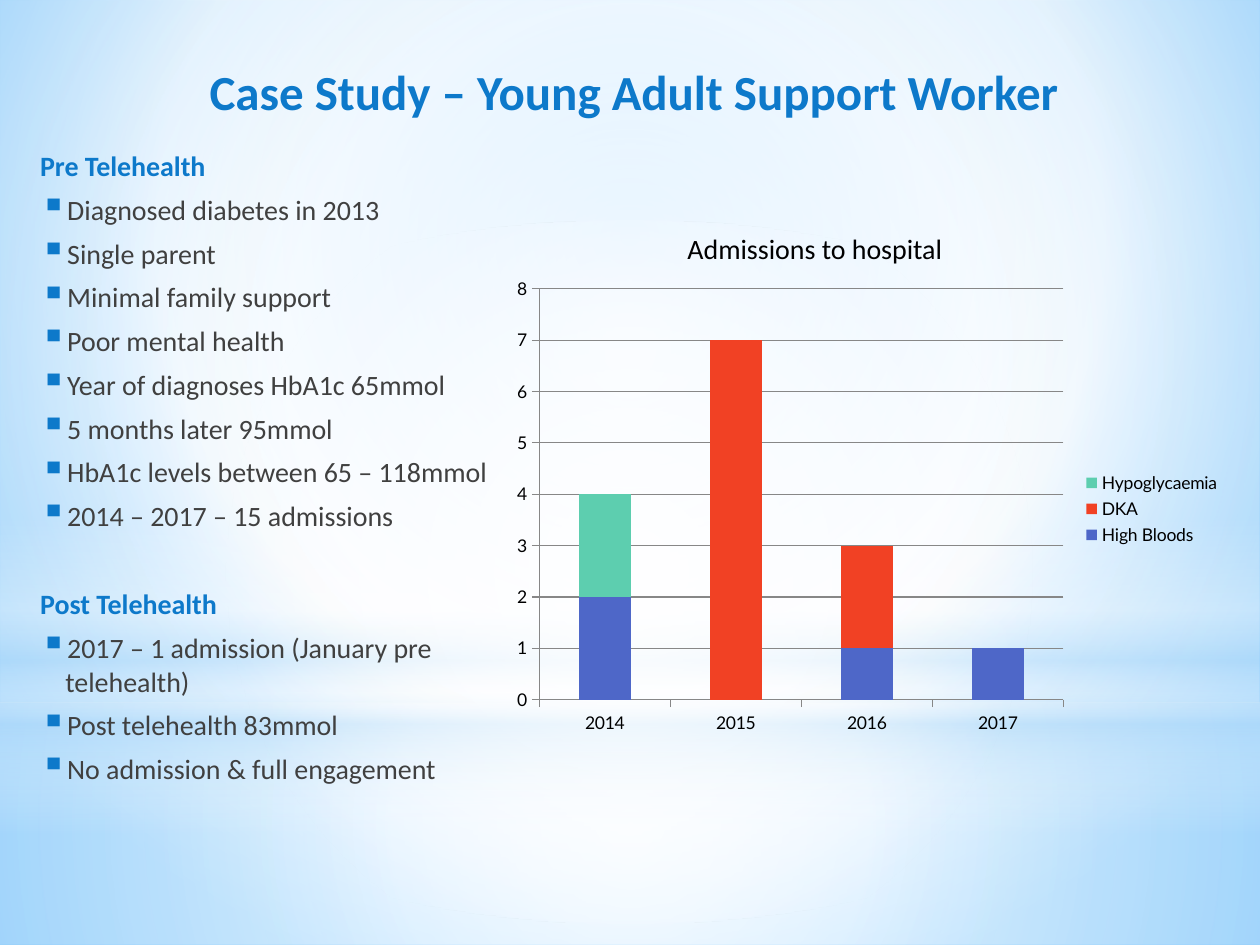
from dataclasses import dataclass

from lxml import etree
from pptx import Presentation
from pptx.chart.data import CategoryChartData
from pptx.dml.color import RGBColor
from pptx.enum.chart import XL_CHART_TYPE, XL_LEGEND_POSITION, XL_TICK_MARK
from pptx.enum.shapes import MSO_SHAPE
from pptx.enum.text import MSO_ANCHOR, MSO_AUTO_SIZE, PP_ALIGN
from pptx.oxml.ns import qn
from pptx.util import Cm, Pt

STACKED = XL_CHART_TYPE.COLUMN_STACKED
LEGEND_RIGHT = XL_LEGEND_POSITION.RIGHT
TICK_OUT, TICK_NONE = XL_TICK_MARK.OUTSIDE, XL_TICK_MARK.NONE
RECTANGLE, OVAL = MSO_SHAPE.RECTANGLE, MSO_SHAPE.OVAL
TOP, LEFT = MSO_ANCHOR.TOP, PP_ALIGN.LEFT
FIT_SHAPE, FIT_NONE = MSO_AUTO_SIZE.SHAPE_TO_FIT_TEXT, MSO_AUTO_SIZE.NONE


@dataclass(frozen=True)
class Theme:
    """Colours, fonts and type sizes of the deck."""

    accent: str = "0D79CA"
    body: str = "404040"
    dark: str = "000000"
    axis: str = "878787"
    white: str = "FFFFFF"
    haze: str = "B4DCFA"
    sky: str = "9ED5FF"
    deep_sky: str = "5BB9FF"
    high_bloods: str = "4E67C8"
    dka: str = "F14124"
    hypo: str = "5DCEAF"
    text_font: str = "Calibri"
    chart_font: str = "Lato"
    title_size: int = 28
    text_size: int = 16
    chart_size: int = 10


def child(parent, tag, **attributes):
    """Append an XML element and return it."""
    element = etree.SubElement(parent, qn(tag))
    for name, value in attributes.items():
        element.set(name, str(value))
    return element


def gradient(stops, focus):
    """Build a gradient: vertical without a focus, else circular."""
    grad = etree.Element(qn("a:gradFill"), rotWithShape="1")
    stop_list = child(grad, "a:gsLst")
    for position, colour, opacity in stops:
        stop = child(stop_list, "a:gs", pos=position * 1000)
        tint = child(stop, "a:srgbClr", val=colour)
        if opacity < 100:
            child(tint, "a:alpha", val=opacity * 1000)
    if focus is None:
        child(grad, "a:lin", ang=90 * 60000, scaled=0)
    else:
        circle = child(grad, "a:path", path="circle")
        edges = {side: edge * 1000 for side, edge in zip("ltrb", focus)}
        child(circle, "a:fillToRect", **edges)
    return grad


class SlideBuilder:
    """Holds the theme and the current slide."""

    def __init__(self, slide, theme):
        self.slide, self.theme = slide, theme

    def background(self, stops, focus):
        """Fill the slide background with a gradient."""
        self.slide.background.fill.solid()
        solid = self.slide.element.xpath(".//p:bgPr/a:solidFill")[0]
        solid.getparent().replace(solid, gradient(stops, focus))

    def glow(self, kind, top, height, stops, focus):
        """Add a full-width gradient layer."""
        layer = self.slide.shapes.add_shape(kind, 0, Cm(top), Cm(25.4), Cm(height))
        layer.shadow.inherit = False
        layer.line.fill.background()
        layer.fill.solid()
        solid = layer.element.xpath("./p:spPr/a:solidFill")[0]
        solid.getparent().replace(solid, gradient(stops, focus))

    def run(self, paragraph, words, size, colour, bold=False):
        """Add one formatted run."""
        run = paragraph.add_run()
        run.text = words
        run.font.name, run.font.size, run.font.bold = self.theme.text_font, Pt(size), bold
        run.font.color.rgb = RGBColor.from_string(colour)

    def indent(self, paragraph, margin, first=0):
        """Set the left margin and first-line indent."""
        properties = paragraph._p.get_or_add_pPr()
        properties.set("marL", str(Cm(margin)))
        properties.set("indent", str(Cm(first)))
        return properties

    def title(self, words, box):
        """Place the title above the background layers."""
        title = self.slide.shapes.title
        title.element.getparent().append(title.element)
        title.left, title.top, title.width, title.height = map(Cm, box)
        frame = title.text_frame
        frame.word_wrap, frame.auto_size, frame.vertical_anchor = False, FIT_SHAPE, TOP
        heading = frame.paragraphs[0]
        heading.alignment = LEFT
        self.indent(heading, 0.13)
        self.run(heading, words, self.theme.title_size, self.theme.accent, True)

    def caption(self, words, box):
        """Add a single-line caption."""
        frame = self.slide.shapes.add_textbox(*map(Cm, box)).text_frame
        frame.word_wrap, frame.auto_size = False, FIT_SHAPE
        self.run(frame.paragraphs[0], words, self.theme.text_size, self.theme.dark)

    def sections(self, sections, box):
        """Add headed bullet lists in one text box."""
        frame = self.slide.shapes.add_textbox(*map(Cm, box)).text_frame
        frame.word_wrap, frame.auto_size = True, FIT_NONE
        theme = self.theme
        for number, (heading, points) in enumerate(sections):
            head = frame.add_paragraph() if number else frame.paragraphs[0]
            self.indent(head, 0.13)
            head.space_before, head.space_after = Pt(28.2 if number else 2.8), Pt(3)
            self.run(head, heading, theme.text_size, theme.accent, True)
            for point in points:
                item = frame.add_paragraph()
                item.space_before, item.space_after = Pt(2.8), Pt(3)
                properties = self.indent(item, 0.64, -0.51)
                child(child(properties, "a:buClr"), "a:srgbClr", val=theme.accent)
                child(properties, "a:buSzPct", val=130000)
                child(properties, "a:buChar", char="▪")
                self.run(item, point, theme.text_size, theme.body)

    def stacked_columns(self, years, series, box, plot_area):
        """Add a stacked column chart from (name, values, colour) rows."""
        data = CategoryChartData()
        data.categories = years
        for name, values, _ in series:
            data.add_series(name, values)
        chart = self.slide.shapes.add_chart(STACKED, *map(Cm, box), data).chart
        chart.has_title = False
        chart.font.name, chart.font.size = self.theme.chart_font, Pt(self.theme.chart_size)
        chart.font.color.rgb = RGBColor.from_string(self.theme.dark)
        chart.has_legend = True
        chart.legend.position, chart.legend.include_in_layout = LEGEND_RIGHT, False
        plot = chart.plots[0]
        plot.gap_width, plot.overlap, plot.vary_by_categories = 150, 100, False
        for column, (_, _, colour) in zip(plot.series, series):
            column.format.fill.solid()
            column.format.fill.fore_color.rgb = RGBColor.from_string(colour)
        scale = chart.value_axis
        scale.minimum_scale, scale.maximum_scale, scale.major_unit = 0, 8, 1
        scale.has_major_gridlines = True
        for axis in (chart.category_axis, scale):
            axis.major_tick_mark, axis.minor_tick_mark = TICK_OUT, TICK_NONE
        for part in (chart.category_axis, scale, scale.major_gridlines):
            part.format.line.color.rgb = RGBColor.from_string(self.theme.axis)
            part.format.line.width = Pt(0.75)
        area = chart.element.xpath(".//c:plotArea")[0]
        for old in area.findall(qn("c:layout")):
            area.remove(old)
        layout = etree.Element(qn("c:layout"))
        area.insert(0, layout)
        manual = child(layout, "c:manualLayout")
        child(manual, "c:layoutTarget", val="inner")
        for side in "xy":
            child(manual, f"c:{side}Mode", val="edge")
        for side, share in zip("xywh", plot_area):
            child(manual, f"c:{side}", val=share)


def main():
    """Build and save the case study slide."""
    deck = Presentation()
    deck.slide_width, deck.slide_height = Cm(25.4), Cm(19.05)
    theme = Theme()
    page = SlideBuilder(deck.slides.add_slide(deck.slide_layouts[5]), theme)
    white, haze, centre = theme.white, theme.haze, (50, 50, 50, 50)
    page.background([(0, theme.sky, 100), (60, white, 100), (100, theme.deep_sky, 100)],
                    (20, 10, 20, 60))
    page.glow(RECTANGLE, 14.17, 4.88, [(0, white, 91), (37, white, 76), (100, haze, 79)], centre)
    page.glow(RECTANGLE, 0, 14.17, [(0, white, 89), (48, white, 62), (100, haze, 79)], centre)
    page.glow(RECTANGLE, 10.46, 6.35,
              [(0, white, 0), (29, white, 30), (45, haze, 40),
               (55, white, 26), (65, haze, 60), (100, white, 0)], None)
    page.glow(OVAL, 4.45, 14.17, [(0, white, 100), (56, white, 0)], centre)
    page.sections([
        ("Pre Telehealth", [
            "Diagnosed diabetes in 2013", "Single parent", "Minimal family support",
            "Poor mental health", "Year of diagnoses HbA1c 65mmol",
            "5 months later 95mmol", "HbA1c levels between 65 – 118mmol",
            "2014 – 2017 – 15 admissions"]),
        ("Post Telehealth", [
            "2017 – 1 admission (January pre telehealth)",
            "Post telehealth 83mmol", "No admission & full engagement"]),
    ], (0.43, 2.87, 9.73, 15.14))
    page.title("Case Study – Young Adult Support Worker", (3.84, 1.12, 17.93, 1.45))
    page.stacked_columns(
        ["2014", "2015", "2016", "2017"],
        [("High Bloods", (2, None, 1, 1), theme.high_bloods),
         ("DKA", (None, 7, 2, None), theme.dka),
         ("Hypoglycaemia", (2, None, None, None), theme.hypo)],
        (9.98, 5.33, 14.88, 9.86), (0.06, 0.05, 0.71, 0.84))
    page.caption("Admissions to hospital", (13.61, 4.55, 5.72, 0.94))
    deck.save("out.pptx")


if __name__ == "__main__":
    main()
